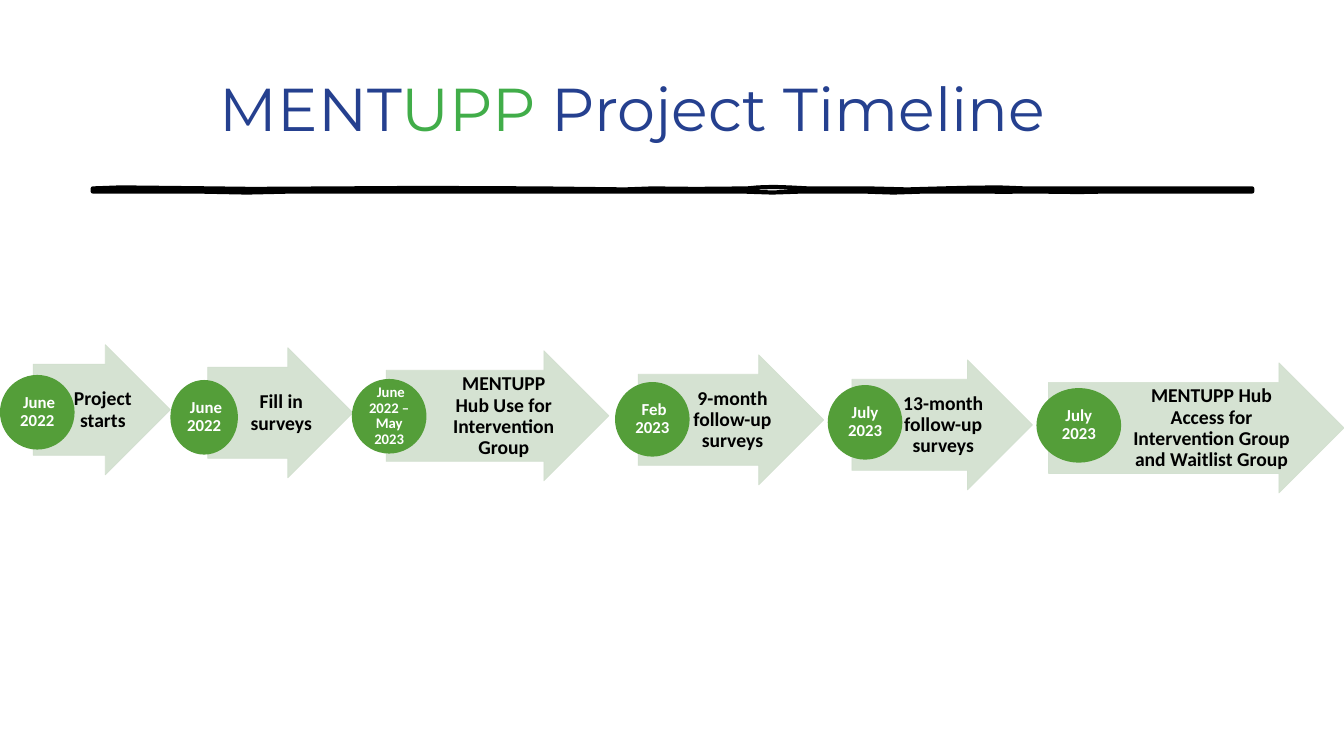
from lxml import etree
from pptx import Presentation, util as u
from pptx.dml.color import RGBColor
from pptx.enum import shapes, text
from pptx.oxml import ns

PX = 9144
BLUE, GREEN, LEAF, SAGE = "25408F", "41AD49", "549E39", "D1DFCE"
BLACK, WHITE = "000000", "FFFFFF"
ARROW_HEIGHT, CIRCLE_HEIGHT = 129, 74

# label, date, date size, arrow (left, top, width), circle (left, top, width)
STAGES = [
    ("Project starts", " June 2022", 12, (33, 342, 136), (0, 372, 74)),
    ("Fill in surveys", " June 2022", 12, (206, 345, 144), (169, 377, 67)),
    ("MENTUPP Hub Use for Intervention Group", " June 2022 – May 2023", 10.5,
     (383, 348, 221), (349, 376, 74)),
    ("9-month follow-up surveys", " Feb 2023", 12, (633, 352, 184), (610, 379, 74)),
    ("13-month follow-up surveys", "July 2023", 12, (845, 357, 179), (821, 382, 74)),
    ("MENTUPP Hub Access for Intervention Group and Waitlist Group", "July 2023", 12,
     (1040, 360, 293), (1028, 385, 84)),
]

RULE_TOP = [
    (92, 187), (120, 186), (212, 187), (250, 187.5), (333, 187), (420, 186.5),
    (537, 187), (620, 188), (647, 187), (690, 187.5), (741, 187), (752, 186),
    (767, 185.5), (782, 186), (802, 187), (862, 187), (900, 188), (934, 187),
    (960, 186.4), (990, 186), (1017, 187), (1101, 187), (1242, 187),
]
RULE_BOTTOM = [
    (1242, 190), (1098, 190), (1070, 190.5), (1026, 190), (1000, 190.2),
    (917, 190), (886, 191), (856, 190), (796, 190), (766, 191), (736, 190),
    (592, 190), (483, 190), (339, 190), (290, 190), (245, 191), (195, 190),
    (92, 190),
]


def px(value):
    """Turn px into EMU."""
    return u.Emu(round(value * PX))


def color(value):
    """Turn a hex string into a colour."""
    return RGBColor.from_string(value)


def add_run(paragraph, wording, *, font="Calibri", size=14, fill=BLACK, bold=False):
    """Add one formatted run to a paragraph."""
    run = paragraph.add_run()
    run.text = wording
    run.font.name = font
    run.font.size = u.Pt(size)
    run.font.bold = bold
    run.font.color.rgb = color(fill)


def write_centred(shape, wording, margins, **style):
    """Fill a shape with one centred bold paragraph."""
    frame = shape.text_frame
    frame.word_wrap = True
    frame.vertical_anchor = text.MSO_ANCHOR.MIDDLE
    (frame.margin_left, frame.margin_top,
     frame.margin_right, frame.margin_bottom) = map(px, margins)
    paragraph = frame.paragraphs[0]
    paragraph.alignment = text.PP_ALIGN.CENTER
    paragraph.line_spacing = 0.9
    add_run(paragraph, wording, bold=True, **style)


def add_preset(slide, kind, box, fill):
    """Add a flat preset shape without a line."""
    shape = slide.shapes.add_shape(kind, *map(px, box))
    shape.shadow.inherit = False
    shape.fill.solid()
    shape.fill.fore_color.rgb = color(fill)
    shape.line.fill.background()
    return shape


def set_opacity(shape, percent):
    """Make every solid colour of a shape partly transparent."""
    for solid in shape._element.spPr.iter(ns.qn("a:srgbClr")):
        etree.SubElement(solid, ns.qn("a:alpha"), val=str(percent * 1000))


def add_arrow(slide, left, top, width, label):
    """Add a stage arrow with its label."""
    box = (left, top, width, ARROW_HEIGHT)
    arrow = add_preset(slide, shapes.MSO_SHAPE.RIGHT_ARROW, box, SAGE)
    arrow.adjustments[0], arrow.adjustments[1] = 0.7, 0.5
    arrow.line.color.rgb = color(SAGE)
    arrow.line.width = u.Pt(0.5)
    set_opacity(arrow, 90)
    label_width = max(width / 2, width * 0.75 - 45)
    label_box = (left + width / 4, top + 20, label_width, 90)
    textbox = slide.shapes.add_textbox(*map(px, label_box))
    write_centred(textbox, label, (4, 1, 2, 1))


def add_date(slide, left, top, width, date, size):
    """Add a date circle."""
    box = (left, top, width, CIRCLE_HEIGHT)
    circle = add_preset(slide, shapes.MSO_SHAPE.OVAL, box, LEAF)
    write_centred(circle, date, (1, 1, 1, 1), size=size, fill=WHITE)


def add_title(slide):
    """Format the title placeholder."""
    title = slide.shapes.title
    title.left, title.top, title.width, title.height = map(px, (208, 34, 918, 145))
    frame = title.text_frame
    frame.auto_size = text.MSO_AUTO_SIZE.NONE
    frame.vertical_anchor = text.MSO_ANCHOR.MIDDLE
    paragraph = frame.paragraphs[0]
    paragraph.alignment = text.PP_ALIGN.LEFT
    for wording, fill in (("MENT", BLUE), ("UPP", GREEN), (" Project Timeline", BLUE)):
        add_run(paragraph, wording, font="Montserrat", size=43.2, fill=fill)


def add_rule(slide):
    """Add the hand-drawn rule under the title."""
    start, *points = [(px(x), px(y)) for x, y in RULE_TOP + RULE_BOTTOM]
    builder = slide.shapes.build_freeform(*start)
    builder.add_line_segments(points, close=True)
    rule = builder.convert_to_shape()
    rule.shadow.inherit = False
    rule.fill.background()
    rule.line.color.rgb = color(BLACK)
    rule.line.width = u.Pt(3)


def main():
    """Build the timeline slide."""
    presentation = Presentation()
    presentation.slide_width, presentation.slide_height = px(1333), px(750)
    slide = presentation.slides.add_slide(presentation.slide_layouts[5])
    add_rule(slide)
    add_title(slide)
    for label, date, size, arrow, circle in STAGES:
        add_arrow(slide, *arrow, label)
        add_date(slide, *circle, date, size)
    presentation.save("out.pptx")


if __name__ == "__main__":
    main()
